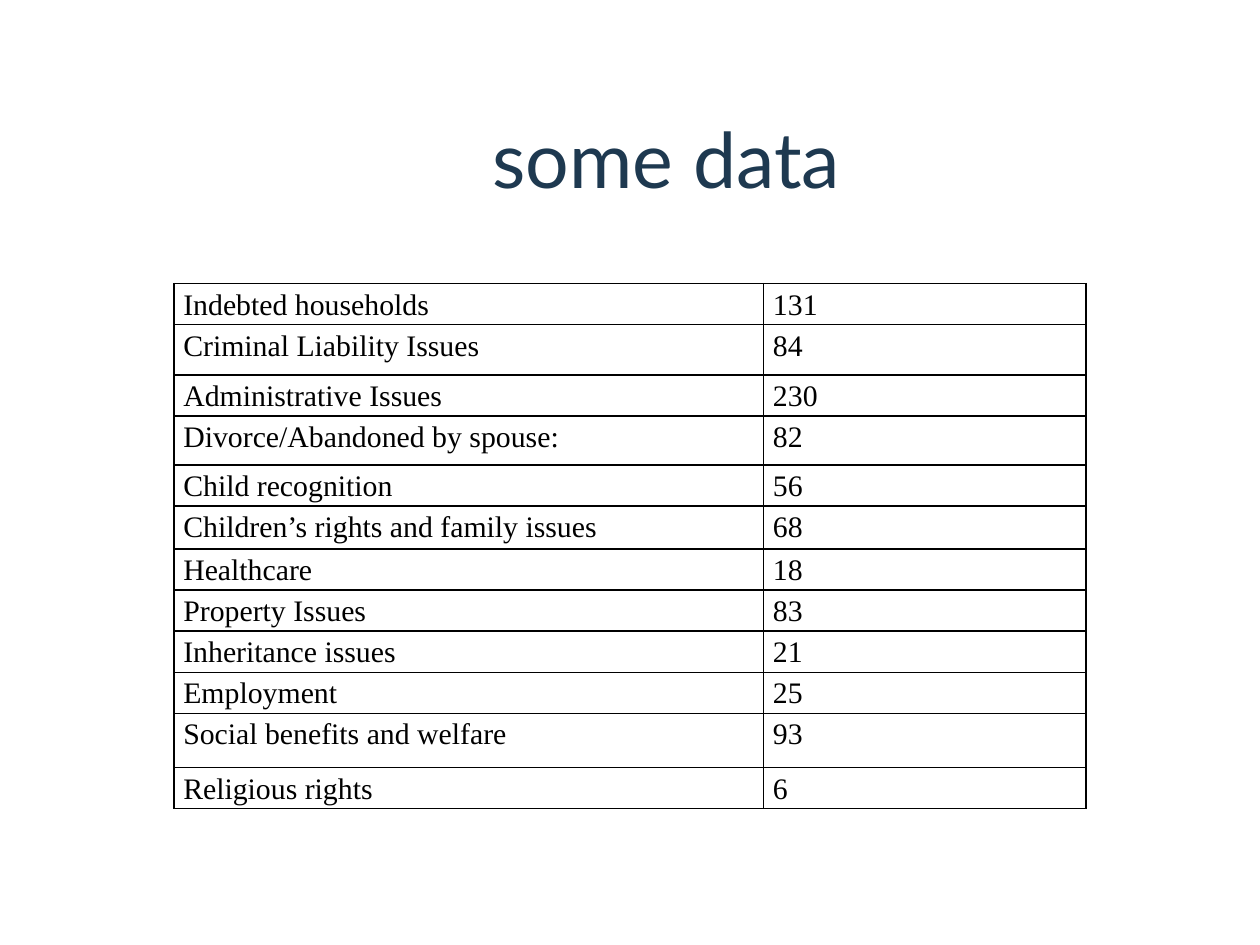
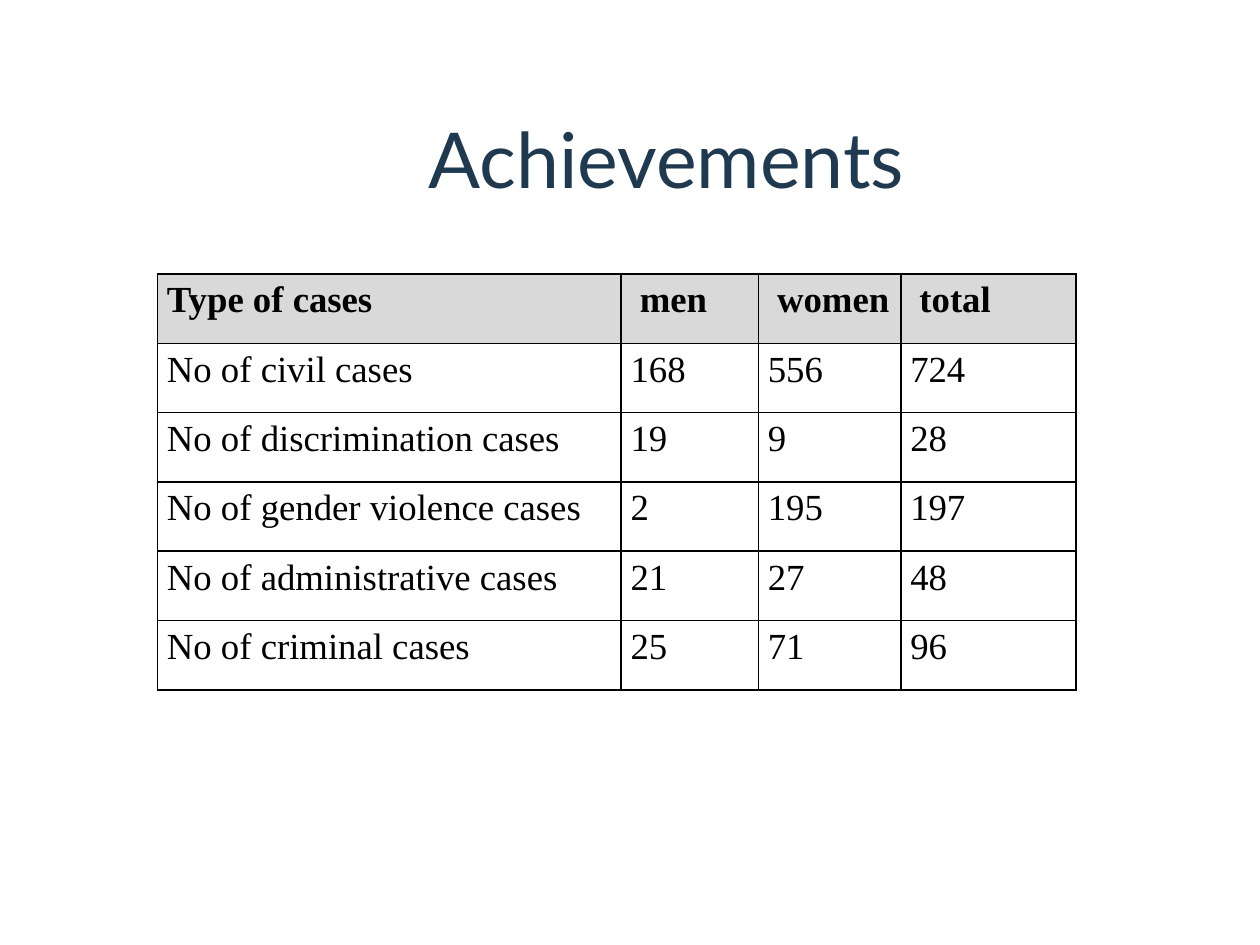
from lxml.etree import SubElement as Sub
from pptx import Presentation as Deck
from pptx.dml.color import RGBColor as Rgb
from pptx.enum.text import MSO_ANCHOR as Anchor, PP_ALIGN as Align
from pptx.oxml.ns import qn
from pptx.util import Inches, Pt

WIDE, HIGH = 10, 7.5
HUES = {"title": "1E3950", "ink": "000000", "head": "D9D9D9"}
SERIF = "Times New Roman"
PAD, INDENT = 5.4, 5.25

ISSUES = [
    ("Indebted households", "131"),
    ("Criminal Liability Issues", "84"),
    ("Administrative Issues", "230"),
    ("Divorce/Abandoned by spouse:", "82"),
    ("Child recognition", "56"),
    ("Children’s rights and family issues", "68"),
    ("Healthcare", "18"),
    ("Property Issues", "83"),
    ("Inheritance issues", "21"),
    ("Employment", "25"),
    ("Social benefits and welfare", "93"),
    ("Religious rights", "6"),
]
SPREAD = {"Indebted households", "Child recognition",
          "Children’s rights and family issues", "Healthcare"}
TALL = {1: 0.4, 3: 0.39, 5: 0.34, 10: 0.43}

CASES = [
    ("Type of cases", "men", "women", "total"),
    ("No of civil cases", "168", "556", "724"),
    ("No of discrimination cases", "19", "9", "28"),
    ("No of gender violence cases", "2", "195", "197"),
    ("No of administrative cases", "21", "27", "48"),
    ("No of criminal cases", "25", "71", "96"),
]


def write(frame, text, font=SERIF, size=17, hue="ink", bold=False,
          align=Align.LEFT, lead=None, after=0):
    para = frame.paragraphs[0]
    para.alignment = align
    para.space_after = Pt(after)
    if lead:
        para.line_spacing = lead
    run = para.add_run()
    run.text = text
    run.font.name, run.font.size, run.font.bold = font, Pt(size), bold
    run.font.color.rgb = Rgb.from_string(HUES[hue])
    end = Sub(para._p, qn("a:endParaRPr"), sz=str(size * 100))
    Sub(end, qn("a:latin"), typeface=font)


def add_title(slide, text):
    box = slide.shapes.add_textbox(
        Inches(WIDE / 8), Inches(HIGH / 10), Inches(8.08), Inches(1))
    frame = box.text_frame
    frame.word_wrap = True
    frame.vertical_anchor = Anchor.MIDDLE
    write(frame, text, font="Lato", size=44, hue="title", align=Align.CENTER)


def style(cell, fill=None, left=PAD):
    cell.margin_left, cell.margin_right = Pt(left), Pt(PAD)
    cell.margin_top = cell.margin_bottom = 0
    props = cell._tc.get_or_add_tcPr()
    for side in ("lnL", "lnR", "lnT", "lnB"):
        line = Sub(props, qn(f"a:{side}"), w=str(Pt(1)))
        ink = Sub(line, qn("a:solidFill"))
        Sub(ink, qn("a:srgbClr"), val=HUES["ink"])
    if fill:
        cell.fill.solid()
        cell.fill.fore_color.rgb = Rgb.from_string(HUES[fill])
    else:
        cell.fill.background()


def add_grid(slide, data, left, top, cols, rows, size, head=False):
    shape = slide.shapes.add_table(
        len(data), len(cols), Inches(left), Inches(top),
        Inches(sum(cols)), Inches(sum(rows)))
    table = shape.table
    table.first_row = head
    table.horz_banding = False
    for col, width in zip(table.columns, cols):
        col.width = Inches(width)
    for row, height in zip(table.rows, rows):
        row.height = Inches(height)
    for r, line in enumerate(data):
        top_row = head and r == 0
        for c, text in enumerate(line):
            cell = table.cell(r, c)
            inset = PAD + INDENT if top_row and c else PAD
            style(cell, "head" if top_row else None, inset)
            wide = text in SPREAD
            write(cell.text_frame, text, size=size, bold=top_row, lead=1.15,
                  align=Align.JUSTIFY if wide else Align.LEFT,
                  after=6 if wide else 0)


def main():
    deck = Deck()
    deck.slide_width, deck.slide_height = Inches(WIDE), Inches(HIGH)
    blank = deck.slide_layouts[6]

    slide = deck.slides.add_slide(blank)
    add_title(slide, "some data")
    rows = [TALL.get(i, 0.26) for i in range(len(ISSUES))]
    add_grid(slide, ISSUES, 1.38, HIGH * 0.3, [4.68, 2.56], rows, 17)

    slide = deck.slides.add_slide(blank)
    add_title(slide, "Achievements")
    add_grid(slide, CASES, WIDE / 8, HIGH * 0.29, [3.68, 1.09, 1.13, 1.39],
             [0.55] * len(CASES), 21, head=True)

    deck.save("out.pptx")


if __name__ == "__main__":
    main()
